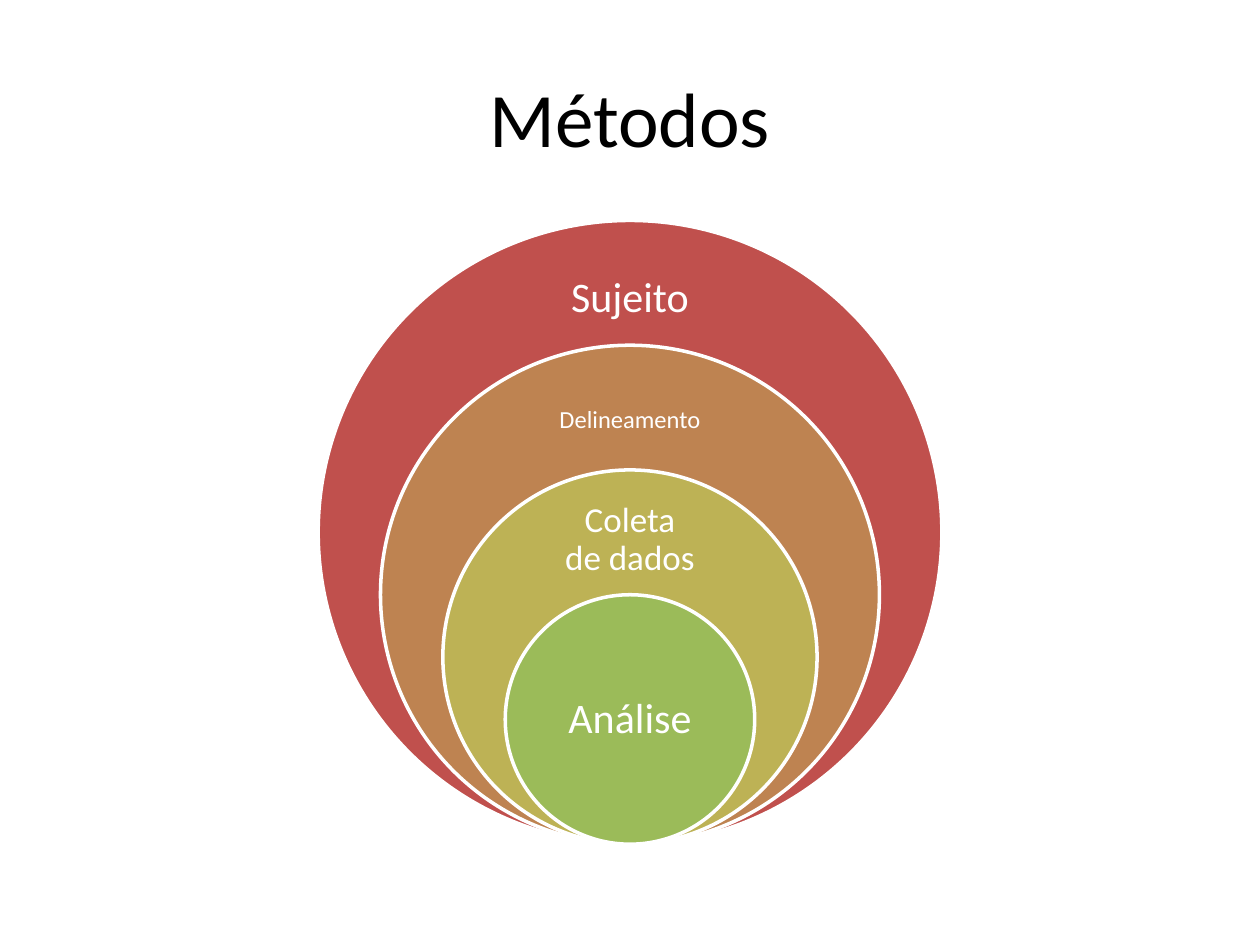
"""Build the methods slide: nested circles that share one lowest point."""
from dataclasses import dataclass

from pptx import Presentation
from pptx.dml.color import RGBColor
from pptx.enum.shapes import MSO_SHAPE as Preset
from pptx.enum.text import MSO_ANCHOR as Anchor, PP_ALIGN as Align
from pptx.shapes.shapetree import GroupShapes
from pptx.text.text import TextFrame
from pptx.util import Inches, Pt

SLIDE_WIDTH, SLIDE_HEIGHT = 10, 7.5
UNIT = SLIDE_WIDTH * 0.099
CENTER = SLIDE_WIDTH / 2
BASELINE = 6.7
CAPTION_WIDTH = 1.4 * UNIT


@dataclass(frozen=True)
class Theme:
    font: str = "Calibri"
    ink: str = "000000"
    paper: str = "FFFFFF"
    red: str = "C0504D"
    orange: str = "BE8351"
    olive: str = "BDB255"
    green: str = "9BBB59"
    title: int = 44
    large: int = 24
    medium: int = 20
    small: int = 14
    outline: int = 2


@dataclass(frozen=True)
class Stage:
    label: str
    color: str
    size: int
    units: int
    caption_top: float
    caption_height: float


THEME = Theme()
STAGES = (
    Stage("Sujeito", THEME.red, THEME.large, 5, 0.25 / 5, 0.75 / 5),
    Stage("Delineamento", THEME.orange, THEME.small, 4, 0.24 / 4, 0.72 / 4),
    Stage("Coleta de dados", THEME.olive, THEME.medium, 3, 0.225 / 3, 0.675 / 3),
    Stage("Análise", THEME.green, THEME.large, 2, 0.25, 0.5),
)


def write(frame: TextFrame, text: str, *, size: int, color: str,
          inset: float = 0.1, spacing: float = 1.0) -> None:
    """Put centred, formatted text into a frame."""
    frame.word_wrap = True
    frame.vertical_anchor = Anchor.MIDDLE
    frame.margin_left = frame.margin_right = Inches(inset)
    frame.margin_top = frame.margin_bottom = Inches(inset)
    paragraph = frame.paragraphs[0]
    paragraph.alignment = Align.CENTER
    paragraph.line_spacing = spacing
    run = paragraph.add_run()
    run.text = text
    run.font.name = THEME.font
    run.font.size = Pt(size)
    run.font.color.rgb = RGBColor.from_string(color)


def draw_stage(shapes: GroupShapes, stage: Stage) -> None:
    """Draw one circle resting on the baseline, with its caption."""
    diameter = stage.units * UNIT
    top = BASELINE - diameter
    circle = shapes.add_shape(
        Preset.OVAL, Inches(CENTER - diameter / 2), Inches(top),
        Inches(diameter), Inches(diameter))
    circle.shadow.inherit = False
    circle.fill.solid()
    circle.fill.fore_color.rgb = RGBColor.from_string(stage.color)
    circle.line.color.rgb = RGBColor.from_string(THEME.paper)
    circle.line.width = Pt(THEME.outline)

    caption = shapes.add_textbox(
        Inches(CENTER - CAPTION_WIDTH / 2),
        Inches(top + stage.caption_top * diameter),
        Inches(CAPTION_WIDTH), Inches(stage.caption_height * diameter))
    write(caption.text_frame, stage.label, size=stage.size, color=THEME.paper,
          inset=stage.size * 0.008, spacing=0.9)


def main() -> None:
    """Create and save the slide."""
    deck = Presentation()
    deck.slide_width, deck.slide_height = Inches(SLIDE_WIDTH), Inches(SLIDE_HEIGHT)
    slide = deck.slides.add_slide(deck.slide_layouts[5])
    heading = slide.shapes.title
    heading.left, heading.top = Inches(0.05 * SLIDE_WIDTH), Inches(0.04 * SLIDE_HEIGHT)
    heading.width, heading.height = Inches(0.9 * SLIDE_WIDTH), Inches(SLIDE_HEIGHT / 6)
    write(heading.text_frame, "Métodos", size=THEME.title, color=THEME.ink)

    rings = slide.shapes.add_group_shape()
    for stage in STAGES:
        draw_stage(rings.shapes, stage)
    deck.save("out.pptx")


if __name__ == "__main__":
    main()
